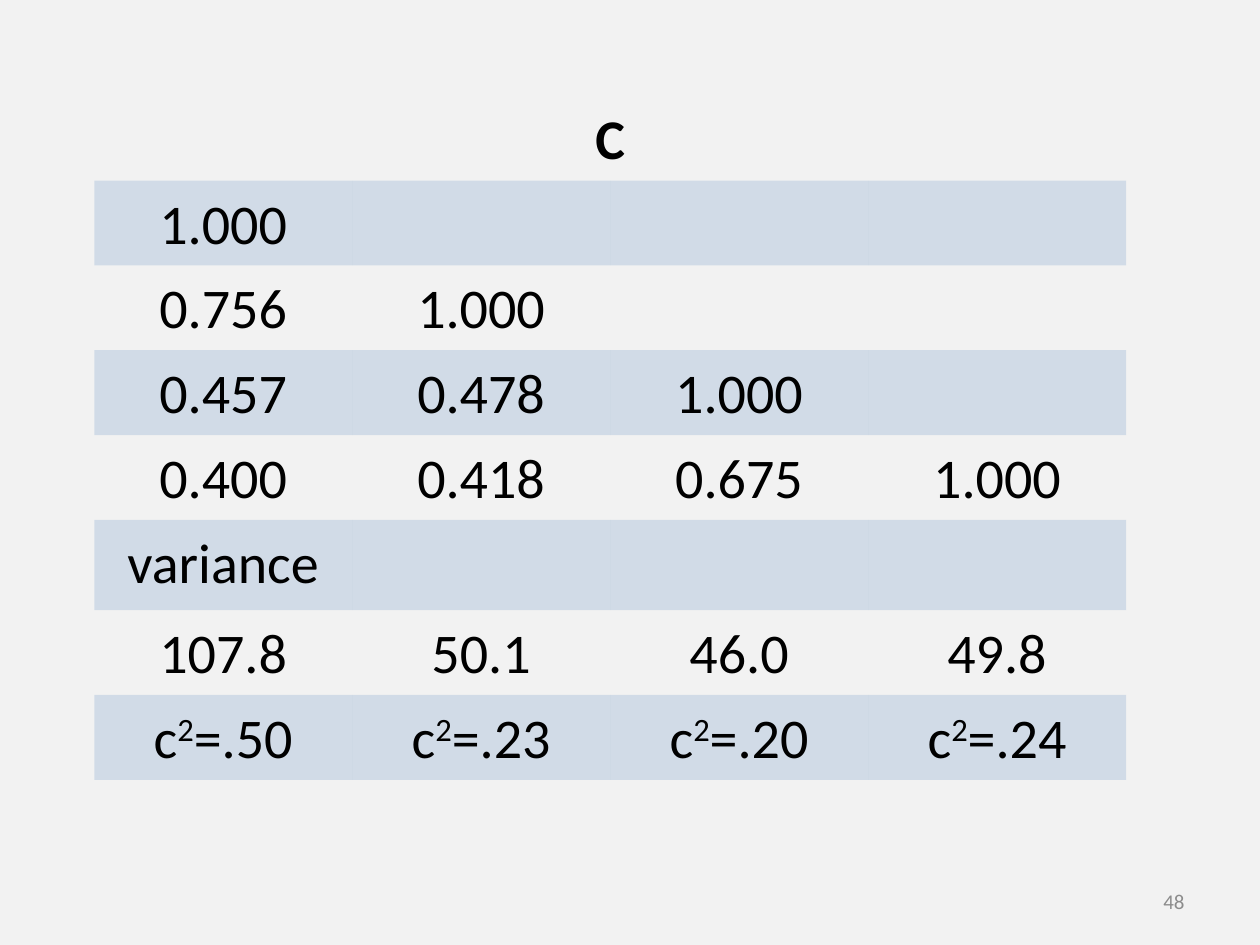
import lxml.etree
import pptx
import pptx.dml.color
import pptx.enum.text
import pptx.oxml.ns
import pptx.util

Cm = pptx.util.Cm
RGBColor = pptx.dml.color.RGBColor
ALIGN = pptx.enum.text.PP_ALIGN
ANCHOR = pptx.enum.text.MSO_ANCHOR

BACKGROUND = RGBColor(0xF2, 0xF2, 0xF2)
BAND = RGBColor(0x4F, 0x81, 0xBD)
BLACK = RGBColor(0, 0, 0)
GREY = RGBColor(0x8C, 0x8C, 0x8C)

FONT = "Calibri"
PLAIN_TABLE_STYLE = "{2D5ABB26-0587-4C30-8999-92F81FD0307C}"
ROW_HEIGHT = 1.71
VARIANCE_ROW_HEIGHT = 1.82

# "^" stands before and after a superscript
ROWS = [
    ["C"],
    ["1.000"],
    ["0.756", "1.000"],
    ["0.457", "0.478", "1.000"],
    ["0.400", "0.418", "0.675", "1.000"],
    ["variance"],
    ["107.8", "50.1", "46.0", "49.8"],
    ["c^2^=.50", "c^2^=.23", "c^2^=.20", "c^2^=.24"],
]
COLUMN_COUNT = 4


def write_text(text_frame, text, size=32, color=BLACK, bold=False,
               align=ALIGN.CENTER, line_spacing=None):
    paragraph = text_frame.paragraphs[0]
    paragraph.alignment = align
    paragraph.line_spacing = line_spacing
    for index, part in enumerate(text.split("^")):
        run = paragraph.add_run()
        run.text = part
        run.font.name = FONT
        run.font.size = pptx.util.Pt(size)
        run.font.bold = bold
        run.font.color.rgb = color
        if index % 2:
            run.font._element.set("baseline", "30000")


def fill_band(cell):
    """Fill a cell with the band colour at 20 % opacity."""
    cell.fill.solid()
    cell.fill.fore_color.rgb = BAND
    color = cell._tc.tcPr.find(".//" + pptx.oxml.ns.qn("a:srgbClr"))
    lxml.etree.SubElement(color, pptx.oxml.ns.qn("a:alpha"), val="20000")


def add_correlation_table(slide, left, top, width):
    height = ROW_HEIGHT * (len(ROWS) - 1) + VARIANCE_ROW_HEIGHT
    table = slide.shapes.add_table(len(ROWS), COLUMN_COUNT, Cm(left), Cm(top),
                                   Cm(width), Cm(height)).table
    table._tbl.tblPr.find(pptx.oxml.ns.qn("a:tableStyleId")).text = PLAIN_TABLE_STYLE
    for column in table.columns:
        column.width = Cm(width / COLUMN_COUNT)

    for row_index, values in enumerate(ROWS):
        is_variance = values == ["variance"]
        table.rows[row_index].height = Cm(
            VARIANCE_ROW_HEIGHT if is_variance else ROW_HEIGHT)
        for column_index in range(COLUMN_COUNT):
            cell = table.cell(row_index, column_index)
            if row_index % 2:
                fill_band(cell)
            else:
                cell.fill.background()
            if column_index < len(values):
                cell.margin_left = cell.margin_right = Cm(0.18)
                cell.margin_top = cell.margin_bottom = 0
                write_text(cell.text_frame, values[column_index],
                           bold=row_index == 0, line_spacing=1.15)

    # Heading spans all columns
    table.cell(0, 0).merge(table.cell(0, COLUMN_COUNT - 1))


def add_page_number(slide, left, top, width, height):
    shape = slide.shapes.add_textbox(Cm(left), Cm(top), Cm(width), Cm(height))
    shape.text_frame.word_wrap = True
    shape.text_frame.vertical_anchor = ANCHOR.MIDDLE
    write_text(shape.text_frame, "48", size=12, color=GREY, align=ALIGN.RIGHT)


def main():
    presentation = pptx.Presentation()
    presentation.slide_width = Cm(25.4)
    presentation.slide_height = Cm(19.05)
    slide = presentation.slides.add_slide(presentation.slide_layouts[6])
    slide.background.fill.solid()
    slide.background.fill.fore_color.rgb = BACKGROUND

    add_page_number(slide, 18.2, 17.66, 5.93, 1.01)
    add_correlation_table(slide, 1.9, 1.93, 20.8)
    presentation.save("out.pptx")


if __name__ == "__main__":
    main()
